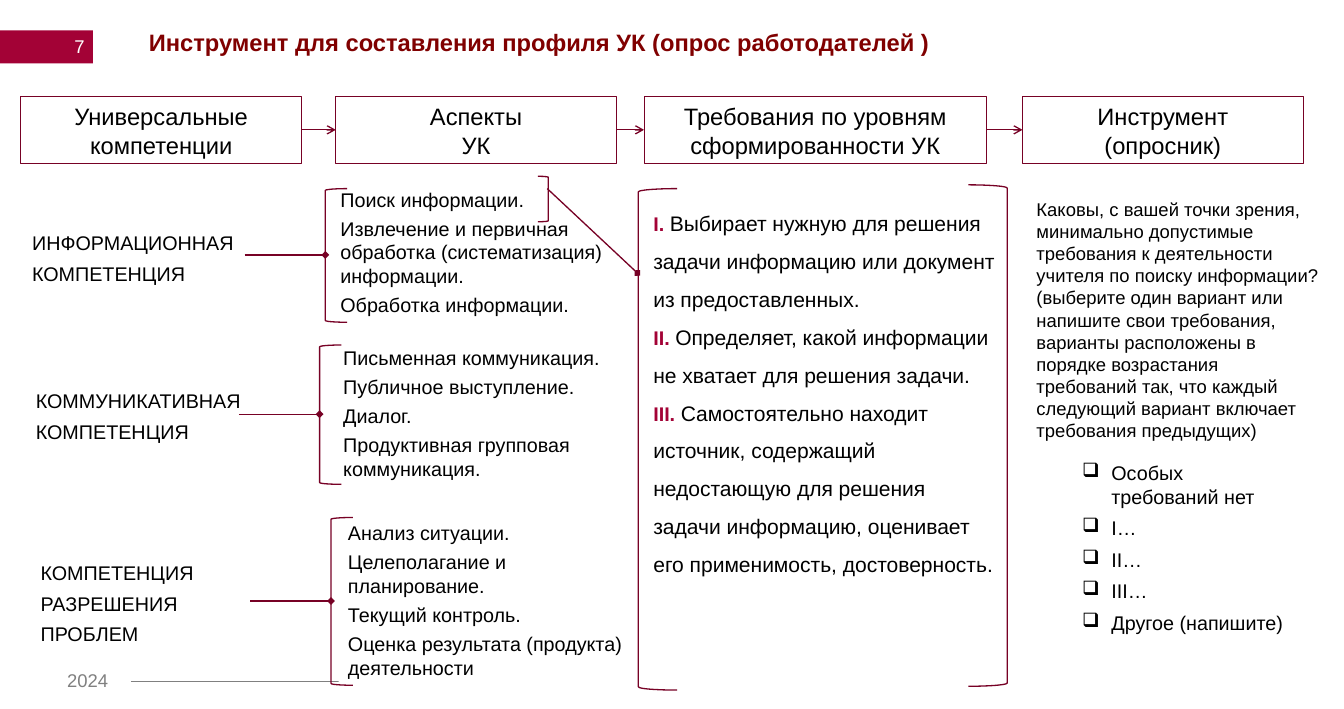
from lxml import etree
from pptx import Presentation
from pptx.dml.color import RGBColor
from pptx.enum.shapes import MSO_CONNECTOR as Connector, MSO_SHAPE as Shape
from pptx.enum.text import MSO_ANCHOR as Anchor, PP_ALIGN as Align
from pptx.oxml.ns import qn
from pptx.util import Emu, Pt

EMU_PER_PX = 9144  # 100 px to the inch
FONT = "Arial"
COLORS = {
    "accent": "A30236", "line": "770125", "title": "800000",
    "text": "000000", "muted": "808080", "white": "FFFFFF",
}

HEADER_TOP, HEADER_HEIGHT = 102, 71
HEADERS = [  # left, width, text
    (22, 296, ["Универсальные компетенции"]),
    (354, 296, ["Аспекты", "УК"]),
    (679, 361, ["Требования по уровням сформированности УК"]),
    (1078, 296, ["Инструмент\v(опросник)"]),
]
COMPETENCES = [  # label, label box, aspects, aspects box, bracket box
    ("ИНФОРМАЦИОННАЯ КОМПЕТЕНЦИЯ", (24, 231, 293, 72),
     ["Поиск информации.",
      "Извлечение и первичная обработка (систематизация) информации.",
      "Обработка информации."],
     (349, 193, 309, 148), (343, 199, 23, 141)),
    ("КОММУНИКАТИВНАЯ КОМПЕТЕНЦИЯ", (28, 398, 293, 72),
     ["Письменная коммуникация.", "Публичное выступление.", "Диалог.",
      "Продуктивная групповая коммуникация."],
     (352, 360, 309, 153), (337, 364, 23, 147)),
    ("КОМПЕТЕНЦИЯ РАЗРЕШЕНИЯ\vПРОБЛЕМ", (33, 579, 293, 109),
     ["Анализ ситуации.", "Целеполагание и планирование.",
      "Текущий контроль.", "Оценка результата (продукта) деятельности"],
     (357, 545, 309, 178), (349, 546, 23, 177)),
]
LEVELS = [
    ("I. ", "Выбирает нужную для решения задачи информацию или документ "
            "из предоставленных."),
    ("II. ", "Определяет, какой информации не хватает для решения задачи."),
    ("III. ", "Самостоятельно находит источник, содержащий недостающую для "
              "решения задачи информацию, оценивает его применимость, "
              "достоверность."),
]
QUESTION = [
    "Каковы, с вашей точки зрения, минимально допустимые требования к "
    "деятельности учителя по поиску информации?",
    "(выберите один вариант или напишите свои требования, варианты "
    "расположены в порядке возрастания требований так, что каждый "
    "следующий вариант включает требования предыдущих)",
]
ANSWERS = ["Особых требований нет", "I…", "II…", "III…", "Другое (напишите)"]


def px(*values):
    return [Emu(value * EMU_PER_PX) for value in values]


def rgb(name):
    return RGBColor.from_string(COLORS[name])


def format_run(run, size, color, bold=False):
    font = run.font
    font.name, font.size, font.bold = FONT, Pt(size), bold
    font.color.rgb = rgb(color)


def add_bullet(paragraph):
    properties = paragraph._p.get_or_add_pPr()
    indent = px(31)[0]
    properties.set("marL", str(indent))
    properties.set("indent", str(-indent))
    etree.SubElement(properties, qn("a:buChar")).set("char", "❑")


def write(shape, lines, size, color="text", bold=False, align=Align.LEFT,
          anchor=Anchor.TOP, gap=0, spacing=None, bullets=False):
    """Fill a shape with one paragraph per line; gap separates paragraphs."""
    frame = shape.text_frame
    frame.word_wrap = True
    frame.vertical_anchor = anchor
    frame.text = "\n".join(lines)
    for index, paragraph in enumerate(frame.paragraphs):
        if bullets:
            add_bullet(paragraph)
        paragraph.alignment = align
        if index and gap:
            paragraph.space_before = Pt(gap)
        if spacing:
            paragraph.line_spacing = spacing
        for run in paragraph.runs:
            format_run(run, size, color, bold)


def add_text(slide, box, lines, size, **style):
    write(slide.shapes.add_textbox(*px(*box)), lines, size, **style)


def add_shape(slide, kind, box, fill=None, line=None, width=1):
    shape = slide.shapes.add_shape(kind, *px(*box))
    shape.shadow.inherit = False
    if fill:
        shape.fill.solid()
        shape.fill.fore_color.rgb = rgb(fill)
    else:
        shape.fill.background()
    if line:
        shape.line.color.rgb = rgb(line)
        shape.line.width = Pt(width)
    else:
        shape.line.fill.background()
    return shape


def add_line(slide, start, end, color="line", width=1.0, tip=None):
    """Draw a straight line with an optional arrowhead type at its end."""
    line = slide.shapes.add_connector(Connector.STRAIGHT, *px(*start, *end))
    line.line.color.rgb = rgb(color)
    line.line.width = Pt(width)
    if tip:
        outline = line.line._get_or_add_ln()
        etree.SubElement(outline, qn("a:tailEnd")).set("type", tip)
    etree.SubElement(line._element.spPr, qn("a:effectLst"))


def add_frame(slide):
    add_shape(slide, Shape.RECTANGLE, (0, 32, 98, 35), fill="accent")
    add_text(slide, (61, 701, 67, 34), ["2024"], 14, color="muted")
    add_line(slide, (138, 719), (390, 719), color="muted", width=1.5)
    add_text(slide, (18, 29, 81, 40), ["7"], 14, color="white",
             align=Align.RIGHT, anchor=Anchor.MIDDLE)
    add_text(slide, (147, 24, 1021, 40),
             ["Инструмент для составления профиля УК (опрос работодателей )"],
             18, color="title", bold=True)


def add_headers(slide):
    middle = HEADER_TOP + HEADER_HEIGHT // 2
    for left, width, lines in HEADERS:
        box = (left, HEADER_TOP, width, HEADER_HEIGHT)
        header = add_shape(slide, Shape.RECTANGLE, box, line="line", width=0.75)
        write(header, lines, 18, align=Align.CENTER, anchor=Anchor.MIDDLE)
    for (left, width, _), (next_left, _, _) in zip(HEADERS, HEADERS[1:]):
        add_line(slide, (left + width, middle), (next_left, middle), tip="arrow")


def add_competence(slide, label, label_box, aspects, aspects_box, bracket):
    add_text(slide, label_box, [label], 15, spacing=1.3)
    panel = add_shape(slide, Shape.RECTANGLE, aspects_box, fill="white")
    write(panel, aspects, 15, gap=4)
    add_shape(slide, Shape.LEFT_BRACKET, bracket, line="line")
    left, top, _, height = bracket
    middle = top + height // 2
    add_line(slide, (left - 85, middle), (left, middle), tip="diamond")


def add_levels(slide):
    box = slide.shapes.add_textbox(*px(679, 204, 380, 488))
    frame = box.text_frame
    frame.word_wrap = True
    for index, (number, description) in enumerate(LEVELS):
        paragraph = frame.add_paragraph() if index else frame.paragraphs[0]
        paragraph.line_spacing = 1.5
        for text, style in ((number, (15, "accent", True)),
                            (description, (16, "text"))):
            run = paragraph.add_run()
            run.text = text
            format_run(run, *style)
    add_shape(slide, Shape.LEFT_BRACKET, (673, 199, 41, 529), line="line")
    add_shape(slide, Shape.RIGHT_BRACKET, (1021, 195, 41, 529), line="line")
    add_shape(slide, Shape.RIGHT_BRACKET, (567, 186, 11, 48), line="line")
    add_line(slide, (577, 199), (672, 288), tip="diamond")


def add_questionnaire(slide):
    add_text(slide, (1131, 481, 234, 195), ANSWERS, 15, gap=6, bullets=True)
    add_text(slide, (1083, 204, 320, 293), QUESTION, 14)


def main():
    presentation = Presentation()
    presentation.slide_width, presentation.slide_height = px(1417, 748)
    slide = presentation.slides.add_slide(presentation.slide_layouts[6])
    add_frame(slide)
    add_headers(slide)
    for competence in COMPETENCES:
        add_competence(slide, *competence)
    add_levels(slide)
    add_questionnaire(slide)
    presentation.save("out.pptx")


if __name__ == "__main__":
    main()
